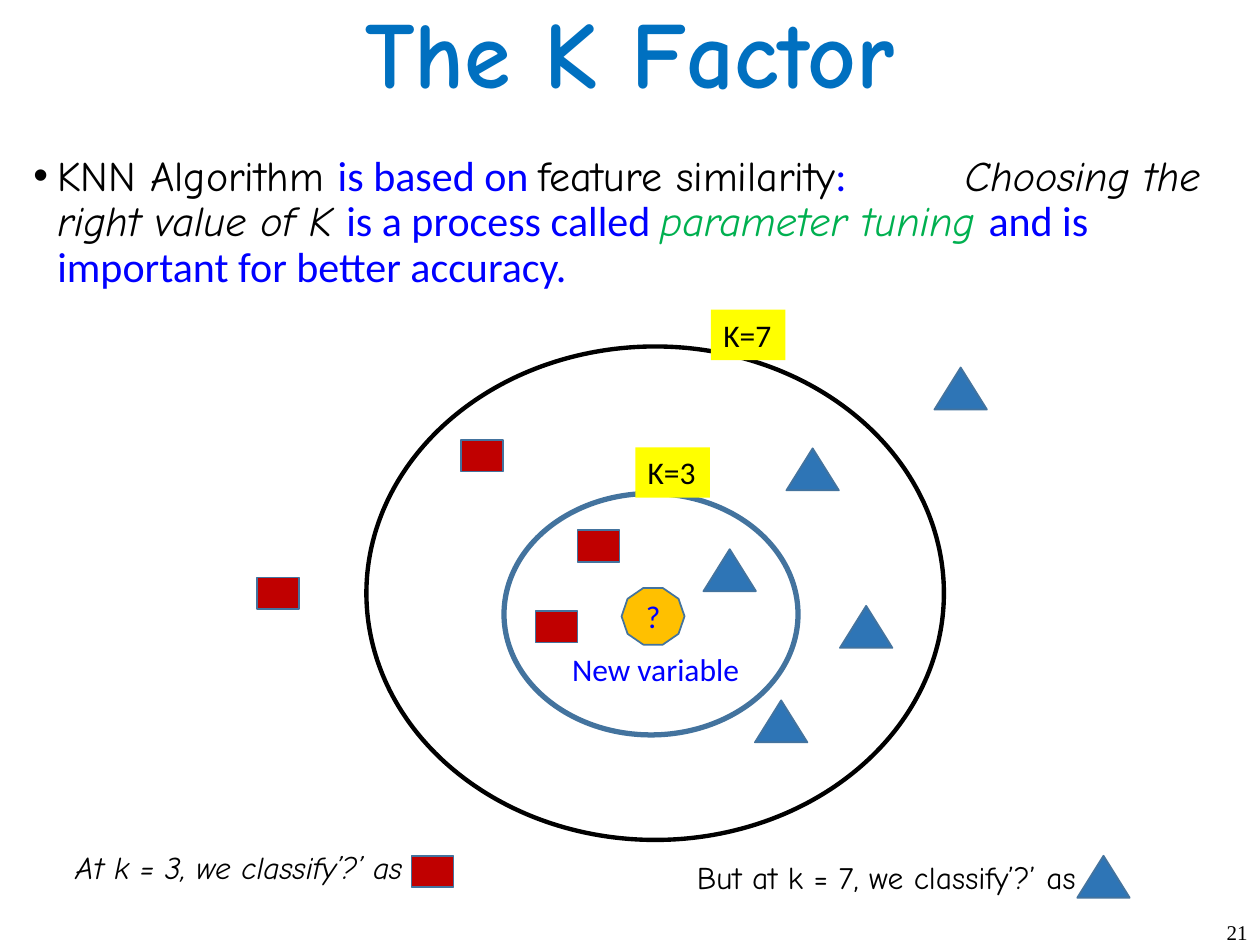
from pptx import Presentation, util as u
from pptx.dml.color import RGBColor
from pptx.enum import shapes, text
from pptx.oxml import parse_xml
from pptx.oxml.ns import nsdecls

theme = dict(
    black="000000", blue="0000FF", green="00B050", head="0070C0",
    red="C00000", tri="2E75B6", gold="FFC000", mark="FFFF00", edge="43739E",
    hand="Comic Neue", sans="Calibri", serif="Times New Roman",
    title=54, body=24, label=18, small=12)
kind = shapes.MSO_SHAPE
side = text.PP_ALIGN

deck = Presentation()
deck.slide_width, deck.slide_height = u.Inches(10), u.Inches(7.5)
slide = deck.slides.add_slide(deck.slide_layouts[6])
cell = deck.slide_width / 120  # grid of 120 columns by 90 rows


def draw(form, box, fill=None, line=None, width=1):
    """Add a shape, or a text box when form is None; box is in grid cells."""
    at = [round(n * cell) for n in box]
    if form is None:
        item = slide.shapes.add_textbox(*at)
    else:
        item = slide.shapes.add_shape(form, *at)
        item.shadow.inherit = False
        item.fill.background()
    if fill:
        item.fill.solid()
        item.fill.fore_color.rgb = RGBColor.from_string(theme[fill])
    if line:
        item.line.color.rgb = RGBColor.from_string(theme[line])
        item.line.width = u.Pt(width)
    return item


def write(item, runs, size, align=side.LEFT, wrap=True):
    """Fill one paragraph with runs of (words, face, colour, italic)."""
    frame = item.text_frame
    frame.word_wrap = wrap
    if not wrap:
        frame.auto_size = text.MSO_AUTO_SIZE.SHAPE_TO_FIT_TEXT
    para = frame.paragraphs[0]
    para.alignment = align
    for words, face, tone, slant in runs:
        run = para.add_run()
        run.text = words
        font = run.font
        font.name, font.size, font.italic = theme[face], u.Pt(theme[size]), slant
        font.color.rgb = RGBColor.from_string(theme[tone])
    return para


# Title
title = draw(None, (0, 0, 120, 9.7))
title.text_frame.vertical_anchor = text.MSO_ANCHOR.MIDDLE
para = write(title, [("The K Factor", "hand", "head", False)], "title", side.CENTER)
para.runs[0].font.bold = True

# Bulleted statement, with a tab stop before the second sentence
para = write(draw(None, (2, 14.2, 116, 72)), [
    ("KNN Algorithm ", "hand", "black", False),
    ("is based on ", "sans", "blue", False),
    ("feature similarity", "hand", "black", False),
    (":\t", "sans", "blue", False),
    ("Choosing the right value of K ", "hand", "black", True),
    ("is a process called ", "sans", "blue", False),
    ("parameter tuning ", "hand", "green", True),
    ("and is important for better accuracy.", "sans", "blue", False),
], "body")
para.line_spacing, para.space_before = 0.9, u.Pt(7.5)
props = para._p.get_or_add_pPr()
props.set("marL", str(u.Inches(0.19)))
props.set("indent", str(-u.Inches(0.19)))
for part in ('<a:buFont %s typeface="Arial"/>',
             '<a:buChar %s char="•"/>',
             f'<a:tabLst %s><a:tab pos="{u.Inches(7.39)}" algn="l"/></a:tabLst>'):
    props.append(parse_xml(part % nsdecls("a")))

# Neighbourhood rings
draw(kind.OVAL, (48, 47, 28, 23), line="edge", width=3)
draw(kind.OVAL, (34.9, 33, 55, 47), line="black", width=2.5)

# Captions
for words, box, slant in [
        ("At k = 3, we classify’?’ as", (6, 80.2, 38.5, 4.8), True),
        ("But at k = 7, we classify’?’ as", (65.2, 81.1, 43.7, 4.8), False)]:
    write(draw(None, box), [(words, "hand", "black", slant)], "label", wrap=False)

# Samples of both classes; the last of each ends its caption
squares = [(55, 50.5), (51, 58.2), (43.9, 41.9), (24.5, 55), (39.2, 81.5)]
wedges = [(71.9, 66.7), (67, 52.3), (74.9, 42.7), (80, 57.7), (89, 35),
          (102.6, 81.5)]
for form, spots, size, fill in [
        (kind.RECTANGLE, squares, (4, 3), "red"),
        (kind.ISOSCELES_TRIANGLE, wedges, (5, 4), "tri")]:
    for spot in spots:
        draw(form, spot + size, fill, "edge")

# New variable
query = draw(kind.DECAGON, (59.2, 56, 6, 5.4), "gold", "edge")
query.text_frame.vertical_anchor = text.MSO_ANCHOR.MIDDLE
write(query, [("?", "sans", "blue", False)], "label", side.CENTER)
write(draw(None, (53.3, 61.3, 18.5, 4.8)),
      [("New variable", "sans", "blue", False)], "label", wrap=False)

# Ring labels
for words, spot in [("K=3", (60.5, 42.6)), ("K=7", (67.7, 29.5))]:
    write(draw(None, spot + (7.1, 4.8), "mark"),
          [(words, "sans", "black", False)], "label", wrap=False)

# Slide number
write(draw(None, (95, 87, 25, 3)), [("21", "serif", "black", False)],
      "small", side.RIGHT)

deck.save("out.pptx")
